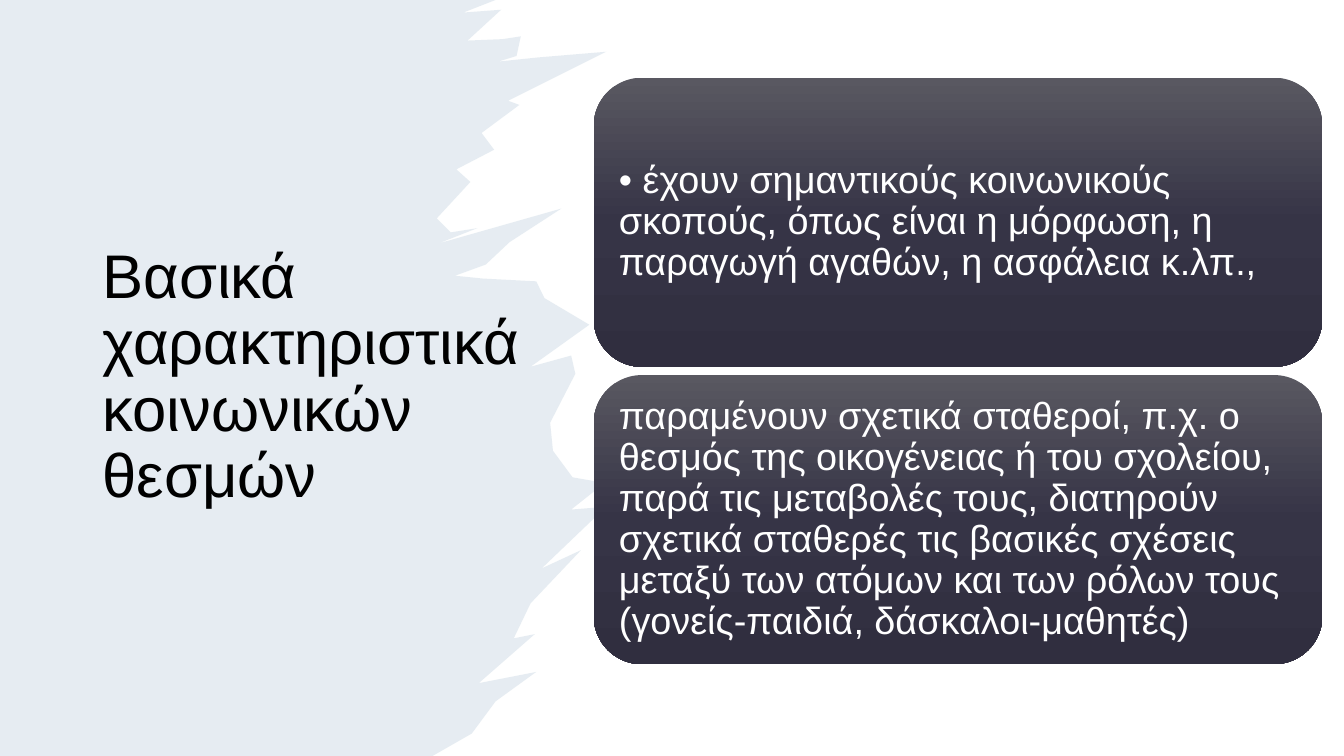
from copy import deepcopy
from dataclasses import dataclass

from lxml.etree import SubElement
from pptx import Presentation
from pptx.dml.color import RGBColor
from pptx.enum.shapes import MSO_SHAPE
from pptx.enum.text import MSO_ANCHOR, MSO_AUTO_SIZE, PP_ALIGN
from pptx.oxml.ns import qn
from pptx.shapes.autoshape import Shape
from pptx.slide import Slide
from pptx.text.text import TextFrame
from pptx.util import Pt

FONT = "Arial"
BLACK = RGBColor(0x00, 0x00, 0x00)
WHITE = RGBColor(0xFF, 0xFF, 0xFF)
BRUSH_BLUE = RGBColor(0xCE, 0xDB, 0xE6)
CARD_GRADIENT = (
    (0.0, RGBColor(0x59, 0x58, 0x61)),
    (0.5, RGBColor(0x36, 0x34, 0x46)),
    (1.0, RGBColor(0x30, 0x2E, 0x3F)),
)

# Ragged brush edge from top to bottom, in points
BRUSH_EDGE = (
    (354, 0), (331, 9), (358, 7), (334, 29), (359, 28), (372, 26), (369, 40),
    (356, 44), (385, 41), (433, 37), (363, 72), (371, 75), (344, 95), (353, 107),
    (326, 121), (336, 130), (312, 156), (322, 166), (341, 163), (313, 174),
    (401, 149), (364, 173), (347, 189), (325, 197), (345, 199), (383, 201),
    (389, 213), (421, 232), (379, 262), (408, 254), (411, 267), (393, 302),
    (395, 322), (409, 341), (432, 345), (408, 364), (433, 362), (387, 406),
    (415, 393), (379, 431), (367, 456), (382, 453), (342, 488), (383, 480),
    (354, 501), (337, 524), (309, 540),
)


@dataclass(frozen=True)
class Card:
    top: float
    text: str


CARD_LEFT, CARD_WIDTH, CARD_HEIGHT = 424.1, 520.5, 206.5
CARD_TOP, CARD_PITCH = 55.5, 212.4
CARD_TEXTS = (
    "• έχουν σημαντικούς κοινωνικούς σκοπούς, όπως είναι η μόρφωση, "
    "η παραγωγή αγαθών, η ασφάλεια κ.λπ.,",
    "παραμένουν σχετικά σταθεροί, π.χ. ο θεσμός της οικογένειας ή του σχολείου, "
    "παρά τις μεταβολές τους, διατηρούν σχετικά σταθερές τις βασικές σχέσεις "
    "μεταξύ των ατόμων και των ρόλων τους (γονείς-παιδιά, δάσκαλοι-μαθητές)",
)
CARDS = [Card(CARD_TOP + row * CARD_PITCH, text) for row, text in enumerate(CARD_TEXTS)]


def write_text(frame: TextFrame, text: str, size: float, color: RGBColor) -> None:
    frame.text = text
    frame.word_wrap = True
    frame.auto_size = MSO_AUTO_SIZE.NONE
    frame.vertical_anchor = MSO_ANCHOR.MIDDLE
    para = frame.paragraphs[0]
    para.alignment = PP_ALIGN.LEFT
    para.line_spacing = 0.9
    para.space_before = Pt(0)
    for span in para.runs:
        span.font.name = FONT
        span.font.size = Pt(size)
        span.font.color.rgb = color


def add_brush(page: Slide) -> Shape:
    builder = page.shapes.build_freeform(0, 0, scale=Pt(1))
    builder.add_line_segments([*BRUSH_EDGE, (0, 540)], close=True)
    brush = builder.convert_to_shape()
    brush.shadow.inherit = False
    brush.line.fill.background()
    brush.fill.solid()
    brush.fill.fore_color.rgb = BRUSH_BLUE
    color = brush.element.spPr.find(qn("a:solidFill"))[0]
    SubElement(color, qn("a:alpha")).set("val", "50000")
    return brush


def add_card(page: Slide, card: Card) -> None:
    box = page.shapes.add_shape(
        MSO_SHAPE.ROUNDED_RECTANGLE,
        Pt(CARD_LEFT), Pt(card.top), Pt(CARD_WIDTH), Pt(CARD_HEIGHT),
    )
    box.shadow.inherit = False
    box.line.fill.background()
    box.fill.gradient()
    box.fill.gradient_angle = 270
    # The preset gradient has two stops, so a third is added
    stop_list = box.element.spPr.find(qn("a:gradFill")).find(qn("a:gsLst"))
    stop_list.append(deepcopy(stop_list[0]))
    for stop, (position, color) in zip(box.fill.gradient_stops, CARD_GRADIENT):
        stop.position = position
        stop.color.rgb = color
    frame = box.text_frame
    frame.margin_left = frame.margin_right = Pt(8)
    frame.margin_top = frame.margin_bottom = Pt(8)
    write_text(frame, card.text, 27, WHITE)


def main() -> None:
    deck = Presentation()
    deck.slide_width, deck.slide_height = Pt(960), Pt(540)
    page = deck.slides.add_slide(deck.slide_layouts[5])

    # Title
    title = page.shapes.title
    title.left, title.top, title.width, title.height = Pt(66), Pt(56), Pt(346.5), Pt(428)
    write_text(title.text_frame, "Βασικά χαρακτηριστικά κοινωνικών θεσμών", 44, BLACK)
    title.text_frame.paragraphs[0].space_after = Pt(6)

    # Brush stroke behind the title
    title.element.addprevious(add_brush(page).element)

    # Cards
    for card in CARDS:
        add_card(page, card)

    deck.save("out.pptx")


if __name__ == "__main__":
    main()
